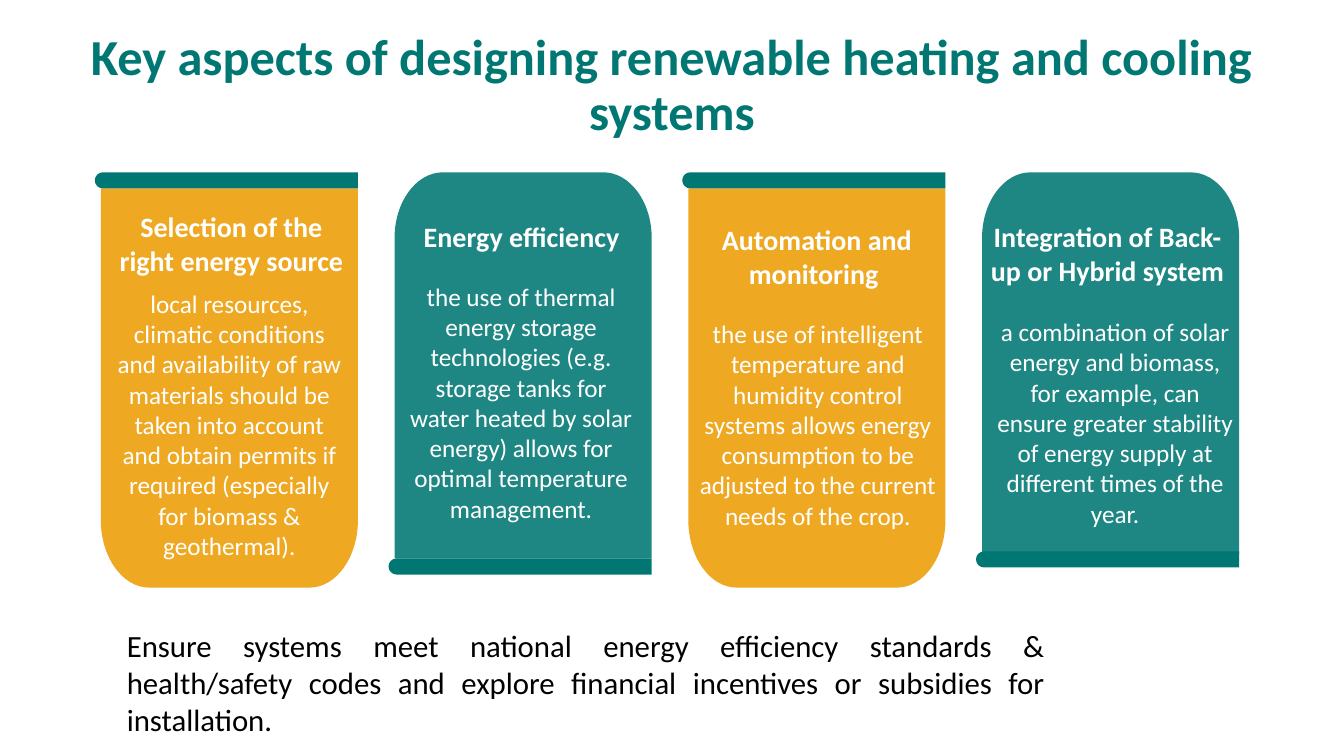
from dataclasses import dataclass

import lxml.etree
import pptx
import pptx.dml.color
import pptx.enum.text
import pptx.oxml.ns
import pptx.util

ALIGN = pptx.enum.text.PP_ALIGN
AUTO_SIZE = pptx.enum.text.MSO_AUTO_SIZE
qn = pptx.oxml.ns.qn
SLIDE_WIDTH, SLIDE_HEIGHT = 13.33, 7.5
CARDS_LEFT, CARDS_RIGHT, CARDS_TOP = 1, 12.29, 1.71
CARD_WIDTH, CARD_HEIGHT = 2.55, 4.12
BAR_HEIGHT, BAR_OVERHANG = 0.16, 0.06
CORNERS = {"tl": (0, 0), "tr": (1, 0), "br": (1, 1), "bl": (0, 1)}
CURVE_PULL = 0.55


@dataclass(frozen=True)
class Theme:
    """Colours, font and type sizes of the slide."""
    font: str = "Calibri"
    teal: str = "007772"
    amber: str = "EEA821"
    white: str = "FFFFFF"
    black: str = "000000"
    title: int = 36
    heading: int = 20
    body: int = 18
    note: int = 22
    panel_opacity: int = 88


THEME = Theme()


@dataclass(frozen=True)
class Aspect:
    """One card: its texts, their boxes within the card, and its base."""
    heading: str
    body: str
    heading_box: tuple
    body_box: tuple
    panel_height: float = 0
    bar_top: float = 0


ASPECTS = [
    Aspect("Selection of the right energy source",
           "local resources, climatic conditions and availability of raw materials should be "
           "taken into account and obtain permits if required (especially for biomass & "
           "geothermal).",
           (0.04, 0.32, 2.51, 1.11), (0.02, 1.1, 2.51, 3.13)),
    Aspect("Energy efficiency",
           "the use of thermal energy storage technologies (e.g. storage tanks for water heated "
           "by solar energy) allows for optimal temperature management.",
           (-0.03, 0.42, 2.58, 0.44), (0, 1.03, 2.51, 2.83), 3.83, 3.83),
    Aspect("Automation and monitoring ",
           "the use of intelligent temperature and humidity control systems allows energy "
           "consumption to be adjusted to the current needs of the crop.",
           (0, 0.45, 2.55, 1.11), (0.01, 1.4, 2.55, 2.52)),
    Aspect("Integration of Back-up or Hybrid system",
           "a combination of solar energy and biomass, for example, can ensure greater stability "
           "of energy supply at different times of the year.",
           (-0.06, 0.42, 2.61, 0.77), (0.03, 1.38, 2.58, 2.52), 3.79, 3.76),
]


def write(frame, text, size, color, bold=False, align=ALIGN.CENTER):
    """Fill a text frame with one formatted paragraph."""
    frame.word_wrap = True
    frame.text = text
    paragraph = frame.paragraphs[0]
    paragraph.alignment = align
    for run in paragraph.runs:
        run.font.name = THEME.font
        run.font.size = pptx.util.Pt(size)
        run.font.bold = bold
        run.font.color.rgb = pptx.dml.color.RGBColor.from_string(color)
    return paragraph


def add_text(slide, box, *style, **options):
    """Add a wrapped text box that grows with its text."""
    label = slide.shapes.add_textbox(*map(pptx.util.Inches, box))
    write(label.text_frame, *style, **options)
    label.text_frame.auto_size = AUTO_SIZE.SHAPE_TO_FIT_TEXT


def rounded_outline(box, rounded, radius_x, radius_y):
    """List outline points clockwise, each with the corner it curves around, if any."""
    left, top, width, height = box
    outline = []
    for corner, (right, bottom) in CORNERS.items():
        x, y = left + right * width, top + bottom * height
        if corner not in rounded:
            outline.append(((x, y), None))
            continue
        on_side = (x, y + (1 - 2 * bottom) * radius_y)
        on_edge = (x + (1 - 2 * right) * radius_x, y)
        start, end = (on_side, on_edge) if right == bottom else (on_edge, on_side)
        outline += [(start, None), (end, (x, y))]
    return outline


def curve_segment(segment, start, corner, end):
    """Turn a line segment into a curve pulled towards a corner."""
    segment.tag_name = None


def bend_corners(panel, outline):
    """Replace the straight segments at rounded corners with curves."""
    segments = list(panel._element.spPr.iter(qn("a:lnTo")))
    for segment, (start, _), (end, corner) in zip(segments, outline, outline[1:]):
        if corner is None:
            continue
        curve = lxml.etree.Element(qn("a:cubicBezTo"))
        controls = [tuple(p + CURVE_PULL * (c - p) for p, c in zip(point, corner))
                    for point in (start, end)]
        for x, y in (*controls, end):
            point = lxml.etree.SubElement(curve, qn("a:pt"))
            point.set("x", str(pptx.util.Inches(x) - panel.left))
            point.set("y", str(pptx.util.Inches(y) - panel.top))
        segment.getparent().replace(segment, curve)


def add_panel(slide, box, rounded, radius_x, radius_y, color, opacity=100):
    """Draw a borderless panel with the named corners rounded."""
    outline = rounded_outline(box, rounded, radius_x, radius_y)
    points = [tuple(map(pptx.util.Inches, point)) for point, _ in outline]
    builder = slide.shapes.build_freeform(*points[0], scale=1.0)
    builder.add_line_segments(points[1:], close=True)
    panel = builder.convert_to_shape()
    bend_corners(panel, outline)
    panel.shadow.inherit = False
    panel.line.fill.background()
    panel.fill.solid()
    panel.fill.fore_color.rgb = pptx.dml.color.RGBColor.from_string(color)
    if opacity < 100:
        fill_color = panel._element.spPr.find(qn("a:solidFill")).find(qn("a:srgbClr"))
        lxml.etree.SubElement(fill_color, qn("a:alpha")).set("val", str(opacity * 1000))


def add_card(slide, box, aspect):
    """Place a card: hanging from a top bar, or standing on a base bar."""
    left, top, width, height = box
    if aspect.panel_height:
        add_panel(slide, (left, top, width, aspect.panel_height), ("tl", "tr"),
                  0.48, 0.65, THEME.teal, THEME.panel_opacity)
    else:
        add_panel(slide, (left, top + BAR_HEIGHT, width, height - BAR_HEIGHT), ("bl", "br"),
                  0.48, 0.67, THEME.amber)
    bar = (left - BAR_OVERHANG, top + aspect.bar_top, width + BAR_OVERHANG, BAR_HEIGHT)
    add_panel(slide, bar, ("tl", "bl"), BAR_HEIGHT / 2, BAR_HEIGHT / 2, THEME.teal)
    for text, (x, y, text_width, text_height), size, bold in (
            (aspect.heading, aspect.heading_box, THEME.heading, True),
            (aspect.body, aspect.body_box, THEME.body, False)):
        add_text(slide, (left + x, top + y, text_width, text_height),
                 text, size, THEME.white, bold=bold)


def add_title(slide, box, text):
    """Move and format the title placeholder."""
    title = slide.shapes.title
    title.left, title.top, title.width, title.height = map(pptx.util.Inches, box)
    frame = title.text_frame
    frame.auto_size = AUTO_SIZE.NONE
    frame.vertical_anchor = pptx.enum.text.MSO_ANCHOR.TOP
    heading = write(frame, text, THEME.title, THEME.teal, bold=True)
    heading.line_spacing = 0.9
    heading.space_before = pptx.util.Pt(0)


def main():
    """Build and save the slide."""
    deck = pptx.Presentation()
    deck.slide_width = pptx.util.Inches(SLIDE_WIDTH)
    deck.slide_height = pptx.util.Inches(SLIDE_HEIGHT)
    slide = deck.slides.add_slide(deck.slide_layouts[5])
    add_title(slide, (0, 0.27, SLIDE_WIDTH, 0.88),
              "Key aspects of designing renewable heating and cooling systems")
    pitch = (CARDS_RIGHT - CARD_WIDTH - CARDS_LEFT) / (len(ASPECTS) - 1)
    for column, aspect in enumerate(ASPECTS):
        left = CARDS_LEFT + column * pitch
        add_card(slide, (left, CARDS_TOP, CARD_WIDTH, CARD_HEIGHT), aspect)
    add_text(slide, (1.16, 6.17, 9.3, 1.21),
             "Ensure systems meet national energy efficiency standards & health/safety codes "
             "and explore financial incentives or subsidies for installation.",
             THEME.note, THEME.black, align=ALIGN.JUSTIFY)
    deck.save("out.pptx")


if __name__ == "__main__":
    main()
